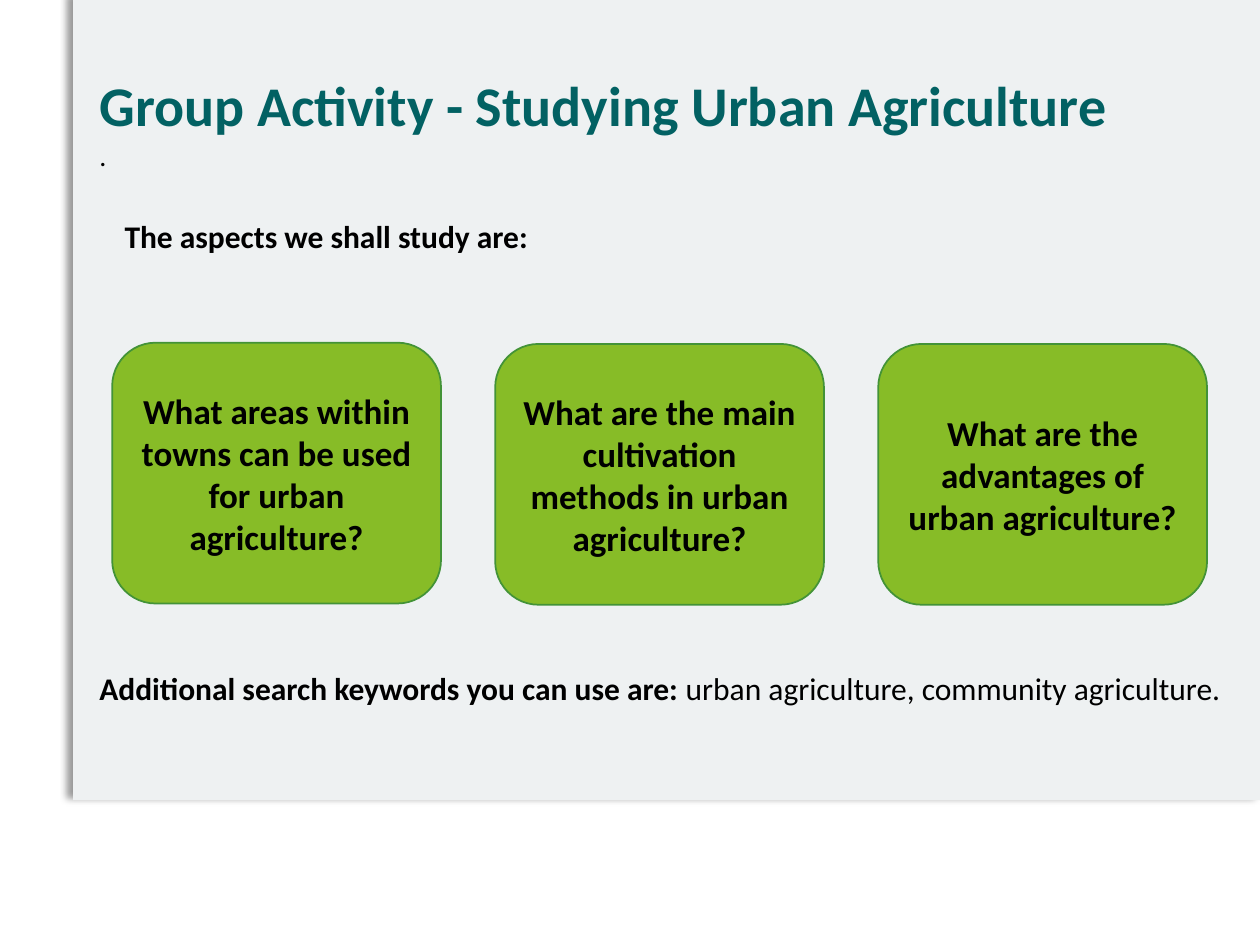
from lxml.etree import SubElement
from pptx import Presentation
from pptx.dml.color import RGBColor
from pptx.enum.shapes import MSO_SHAPE
from pptx.enum.text import MSO_ANCHOR, MSO_AUTO_SIZE, PP_ALIGN
from pptx.oxml.ns import qn
from pptx.util import Inches, Pt

TITLE = "Group Activity - Studying Urban Agriculture"
SUBTITLE = "."
INTRO = "The aspects we shall study are:"
QUESTIONS = [
    ("What areas within towns can be used for urban agriculture?", 2.72),
    ("What are the main cultivation methods in urban agriculture?", 2.73),
    ("What are the advantages of urban agriculture?", 2.73),
]
KEYWORDS = [
    ("Additional search keywords you can use are: ", True),
    ("urban agriculture, community agriculture.", False),
]

THEME = {
    "font": "Calibri",
    "panel": RGBColor.from_string("EEF1F2"),
    "title": RGBColor.from_string("026163"),
    "text": RGBColor.from_string("000000"),
    "card": RGBColor.from_string("87BC27"),
    "card_line": RGBColor.from_string("439337"),
    "title_size": Pt(32),
    "subtitle_size": Pt(16),
    "body_size": Pt(18),
    "card_size": Pt(20),
}
CARD_LEFT, CARD_STEP, CARD_WIDTH, CARD_HEIGHT = 0.89, 3.04, 2.61, 2.07


def style(paragraph, size, color="text", bold=None):
    font = paragraph.font
    font.name = THEME["font"]
    font.size = THEME[size]
    font.color.rgb = THEME[color]
    font.bold = bold


def add_panel(page):
    panel = page.shapes.add_shape(
        MSO_SHAPE.RECTANGLE, Inches(0.58), Inches(-0.03), Inches(9.42), Inches(6.38))
    panel.fill.solid()
    panel.fill.fore_color.rgb = THEME["panel"]
    panel.line.fill.background()
    panel.shadow.inherit = False
    effects = panel._element.spPr.find(qn("a:effectLst"))
    shadow = SubElement(effects, qn("a:outerShdw"), blurRad=str(Pt(4)), dist=str(Pt(3)),
                        dir="10800000", algn="r", rotWithShape="0")
    color = SubElement(shadow, qn("a:srgbClr"), val="000000")
    SubElement(color, qn("a:alpha"), val="40000")
    page.shapes._spTree.insert(2, panel._element)


def add_title(page):
    title = page.shapes.title
    title.left, title.top = Inches(0.69), Inches(0.23)
    title.width, title.height = Inches(8.9), Inches(1.26)
    frame = title.text_frame
    frame.text = TITLE
    frame.auto_size = MSO_AUTO_SIZE.NONE
    frame.vertical_anchor = MSO_ANCHOR.MIDDLE
    paragraph = frame.paragraphs[0]
    paragraph.alignment = PP_ALIGN.LEFT
    paragraph.line_spacing = 0.9
    style(paragraph, "title_size", "title", True)


def add_text(page, left, top, width, spans, size, wrap=True, grow=True):
    box = page.shapes.add_textbox(Inches(left), Inches(top), Inches(width), Inches(0.4))
    frame = box.text_frame
    frame.word_wrap = wrap
    frame.auto_size = MSO_AUTO_SIZE.SHAPE_TO_FIT_TEXT if grow else MSO_AUTO_SIZE.NONE
    paragraph = frame.paragraphs[0]
    style(paragraph, size)
    for text, bold in spans:
        span = paragraph.add_run()
        span.text = text
        span.font.bold = bold
    return paragraph


def add_card(page, index, text, top):
    card = page.shapes.add_shape(
        MSO_SHAPE.ROUNDED_RECTANGLE, Inches(CARD_LEFT + index * CARD_STEP), Inches(top),
        Inches(CARD_WIDTH), Inches(CARD_HEIGHT))
    card.shadow.inherit = False
    card.fill.solid()
    card.fill.fore_color.rgb = THEME["card"]
    card.line.color.rgb = THEME["card_line"]
    card.line.width = Pt(1)
    frame = card.text_frame
    frame.text = text
    frame.word_wrap = True
    frame.vertical_anchor = MSO_ANCHOR.MIDDLE
    paragraph = frame.paragraphs[0]
    paragraph.alignment = PP_ALIGN.CENTER
    style(paragraph, "card_size", bold=True)


def main():
    deck = Presentation()
    deck.slide_width, deck.slide_height = Inches(10), Inches(7.5)
    page = deck.slides.add_slide(deck.slide_layouts[5])
    add_panel(page)
    add_title(page)
    subtitle = add_text(page, 0.69, 1.08, 8.89, [(SUBTITLE, False)], "subtitle_size", grow=False)
    subtitle.line_spacing = 0.9
    for index, (text, top) in enumerate(QUESTIONS):
        add_card(page, index, text, top)
    add_text(page, 0.89, 1.67, 4.67, [(INTRO, True)], "body_size")
    add_text(page, 0.69, 5.26, 9.28, KEYWORDS, "body_size", wrap=False)
    deck.save("out.pptx")


if __name__ == "__main__":
    main()
